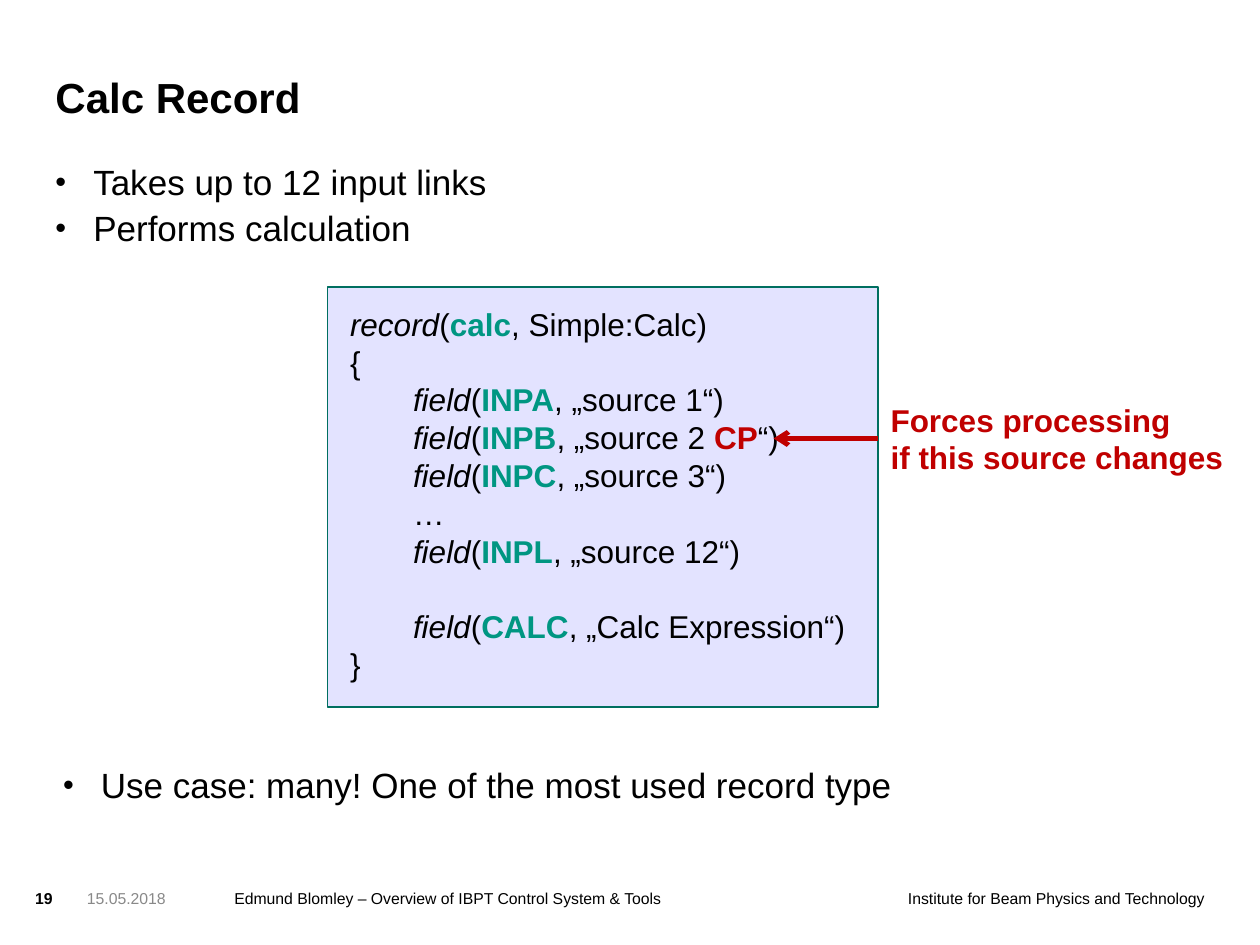
from lxml import etree
from pptx import Presentation
from pptx import util as u
from pptx.dml import color
from pptx.enum import shapes, text
from pptx.oxml import ns

THEME = {
    "font": "Arial",
    "ink": "000000", "gray": "898989", "green": "009682",
    "red": "C00000", "fill": "9999FF", "edge": "006F60",
    "title": 24, "list": 20, "code": 18, "foot": 9,
}


def rgb(name):
    return color.RGBColor.from_string(THEME[name])


def write(box, lines, size, gap=0, inset=0, **form):
    frame = box.text_frame
    base = {"word_wrap": True, "auto_size": text.MSO_AUTO_SIZE.NONE,
            "vertical_anchor": text.MSO_ANCHOR.TOP}
    for side in ("left", "right", "top", "bottom"):
        base["margin_" + side] = u.Inches(inset / 2 if side in ("top", "bottom") else inset)
    for key, val in base.items():
        setattr(frame, key, form.get(key, val))
    for i, line in enumerate(lines):
        para = frame.paragraphs[0] if i == 0 else frame.add_paragraph()
        para.alignment = form.get("align", text.PP_ALIGN.LEFT)
        para.line_spacing = form.get("pitch", 1.0)
        para.space_before = u.Pt(gap if i else 0)
        if form.get("bullet"):
            prop = para._p.get_or_add_pPr()
            prop.set("marL", str(u.Inches(0.3)))
            prop.set("indent", str(u.Inches(-0.3)))
            for tag, key, val in (("a:buSzPct", "val", "88000"),
                                  ("a:buFont", "typeface", THEME["font"]),
                                  ("a:buChar", "char", "•")):
                etree.SubElement(prop, ns.qn(tag)).set(key, val)
        for part, look in [(line, {})] if isinstance(line, str) else line:
            run = para.add_run()
            run.text = part
            run.font.color.rgb = rgb(look.get("hue", form.get("hue", "ink")))
            style = {"name": THEME["font"], "size": u.Pt(THEME[size]),
                     "bold": look.get("bold", form.get("bold", False)),
                     "italic": look.get("italic", False)}
            for key, val in style.items():
                setattr(run.font, key, val)
    return frame


deck = Presentation()
deck.slide_width, deck.slide_height = u.Inches(10), u.Inches(7.5)
slide = deck.slides.add_slide(deck.slide_layouts[1])
items = slide.shapes

title, body = slide.placeholders
for box, spot in ((title, (0.44, 0.43, 7.51, 0.54)), (body, (0.44, 1.31, 9.12, 1.1))):
    box.left, box.top, box.width, box.height = map(u.Inches, spot)
write(title, ["Calc Record"], "title", bold=True, pitch=0.9,
      vertical_anchor=text.MSO_ANCHOR.BOTTOM)
write(body, ["Takes up to 12 input links", "Performs calculation"], "list",
      gap=4.8, pitch=0.9, bullet=True)

panel = items.add_shape(shapes.MSO_SHAPE.RECTANGLE, *map(u.Inches, (2.6, 2.28, 4.37, 3.33)))
panel.shadow.inherit = False
panel.fill.solid()
panel.fill.fore_color.rgb = rgb("fill")
tint = panel.fill._xPr.find(ns.qn("a:solidFill"))[0]
etree.SubElement(tint, ns.qn("a:alpha")).set("val", "27000")
panel.line.color.rgb = rgb("edge")
panel.line.width = u.Pt(1)

call = {"italic": True}
name = {"hue": "green", "bold": True}
mark = {"hue": "red", "bold": True}
code = [[("record", call), ("(", {}), ("calc", name), (", Simple:Calc)", {})], "{"]
for field, value, flag in (("INPA", "source 1", ""), ("INPB", "source 2 ", "CP"),
                           ("INPC", "source 3", ""), (None, "…", ""),
                           ("INPL", "source 12", ""), ("CALC", "Calc Expression", "")):
    if field is None:
        code.append(value)
        continue
    line = [("field", call), ("(", {}), (field, name), (", „" + value, {})]
    if flag:
        line.append((flag, mark))
    code.append(line + [("“)", {})])
code.append("}")

box = items.add_textbox(*map(u.Inches, (2.68, 2.37, 4.3, 3.13)))
frame = write(box, code, "code", inset=0.1)
for para in frame.paragraphs[2:-1]:
    para._p.get_or_add_pPr().set("marL", str(u.Inches(0.5)))
frame.paragraphs[-2].space_before = u.Pt(21.5)

arrow = items.add_connector(shapes.MSO_CONNECTOR.STRAIGHT,
                            *map(u.Inches, (6.97, 3.48, 6.14, 3.48)))
arrow.line.color.rgb = rgb("red")
arrow.line.width = u.Pt(2.75)
etree.SubElement(arrow.line._get_or_add_ln(), ns.qn("a:tailEnd")).set("type", "arrow")
etree.SubElement(arrow._element.spPr, ns.qn("a:effectLst"))

note = items.add_textbox(*map(u.Inches, (6.97, 3.13, 2.87, 0.71)))
write(note, ["Forces processing", "if this source changes"], "code", inset=0.1,
      hue="red", bold=True, word_wrap=False)

case = items.add_textbox(*map(u.Inches, (0.5, 6.1, 9.12, 0.94)))
write(case, ["Use case: many! One of the most used record type"], "list",
      pitch=0.9, bullet=True)

for label, left, width, form in (
        ("19", 0.28, 0.36, {"bold": True}),
        ("15.05.2018", 0.69, 1.12, {"hue": "gray"}),
        ("Edmund Blomley – Overview of IBPT Control System & Tools", 1.86, 4.99, {}),
        ("Institute for Beam Physics and Technology", 6.56, 3, {"align": text.PP_ALIGN.RIGHT})):
    foot = items.add_textbox(*map(u.Inches, (left, 7.05, width, 0.4)))
    write(foot, [label], "foot", **form)

deck.save("out.pptx")
